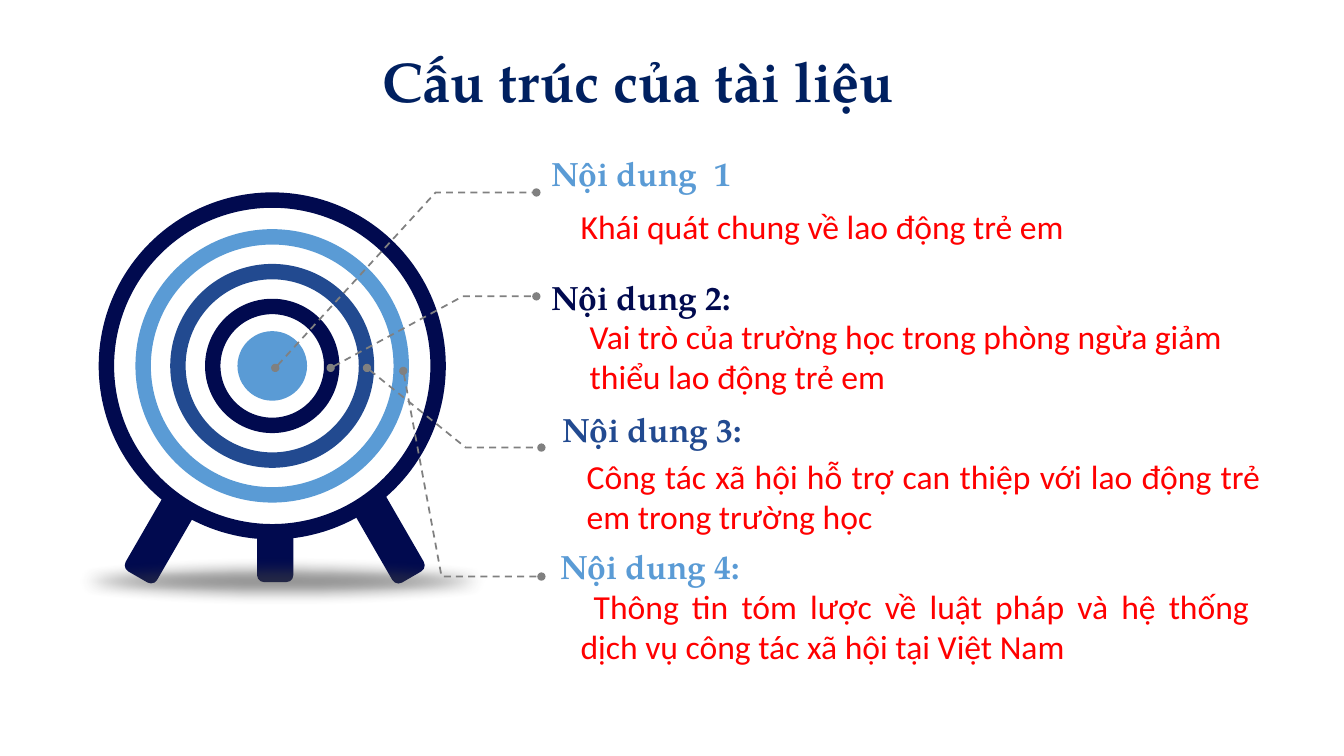
"""Build the slide with a target and its four called-out content parts."""
import lxml.etree
import pptx
import pptx.dml.color
import pptx.enum.dml
import pptx.enum.shapes
import pptx.enum.text
import pptx.oxml.ns
import pptx.util

TITLE = "Cấu trúc của tài liệu"
SECTIONS = [
    dict(heading="Nội dung  1", body="Khái quát chung về lao động trẻ em",
         color="sky", justify=True, heading_at=(5.37, 1.47, 7.29, 0.5),
         body_at=(5.66, 1.99, 7.29, 0.5), indent=0,
         leader=[(2.73, 3.65), (4.32, 1.91), (5.32, 1.91)]),
    dict(heading="Nội dung 2:",
         body="Vai trò của trường học trong phòng ngừa giảm thiểu lao động trẻ em",
         color="navy", justify=False, heading_at=(5.37, 2.7, 6.91, 0.5),
         body_at=(5.75, 3.08, 6.91, 0.91), indent=0,
         leader=[(3.28, 3.65), (4.59, 2.94), (5.32, 2.94)]),
    dict(heading="Nội dung 3:",
         body="Công tác xã hội hỗ trợ can thiệp với lao động trẻ em trong trường học",
         color="blue", justify=True, heading_at=(5.48, 4.01, 7.1, 0.5),
         body_at=(5.72, 4.47, 6.88, 0.91), indent=0,
         leader=[(3.64, 3.65), (4.62, 4.44), (5.37, 4.44)]),
    dict(heading="Nội dung 4:",
         body="Thông tin tóm lược về luật pháp và hệ thống dịch vụ công tác xã hội tại Việt Nam",
         color="sky", justify=True, heading_at=(5.46, 5.37, 6.96, 0.41),
         body_at=(5.66, 5.76, 6.83, 0.91), indent=0.13,
         leader=[(4, 3.68), (4.38, 5.72), (5.37, 5.72)]),
]
TARGET_CENTER = (2.7, 3.63)
RINGS = [(3.29, "navy"), (2.56, "sky"), (1.87, "blue"), (1.18, "navy")]
BULLSEYE = 0.69
LEGS = [(2.73, 4.65, 0), (3.52, 4.75, -30), (1.93, 4.75, 30)]
LEG_SIZE = (0.36, 2.25)
GROUND_SHADOW = (0.29, 5.52, 5.01, 0.49)

THEME = dict(
    navy="010A4F", blue="224A90", sky="5A9BD5", title="002060", body="FF0000",
    white="FFFFFF", leader="808080", ground="404040",
    serif="TeX Gyre Pagella", sans="Calibri",
    title_size=40, text_size=24, ring_width=11, leader_width=1.25,
)
ALIGN = pptx.enum.text.PP_ALIGN
PRESET = pptx.enum.shapes.MSO_SHAPE


def inches(values):
    return [pptx.util.Inches(value) for value in values]


def color(name):
    return pptx.dml.color.RGBColor.from_string(THEME[name])


def add_xml(parent, tag, **attributes):
    return lxml.etree.SubElement(parent, pptx.oxml.ns.qn(tag), attributes)


def add_text(slide, text, box, face, size, ink, align, bold=False):
    frame = slide.shapes.add_textbox(*inches(box)).text_frame
    frame.word_wrap = True
    paragraph = frame.paragraphs[0]
    paragraph.text = text
    paragraph.alignment = align
    paragraph.font.name = THEME[face]
    paragraph.font.size = pptx.util.Pt(THEME[size])
    paragraph.font.bold = bold
    paragraph.font.color.rgb = color(ink)
    return frame


def add_filled(slide, preset, center, size, fill, outline=None):
    left, top = (middle - length / 2 for middle, length in zip(center, size))
    shape = slide.shapes.add_shape(preset, *inches((left, top, *size)))
    shape.shadow.inherit = False
    shape.fill.solid()
    shape.fill.fore_color.rgb = color(fill)
    if outline:
        shape.line.color.rgb = color(outline)
        shape.line.width = pptx.util.Pt(THEME["ring_width"])
    else:
        shape.line.fill.background()
    return shape


def add_target(slide):
    for x, y, angle in LEGS:
        leg = add_filled(slide, PRESET.ROUNDED_RECTANGLE, (x, y), LEG_SIZE, "navy")
        leg.adjustments[0] = 0.194
        leg.rotation = angle
    for diameter, outline in RINGS:
        add_filled(slide, PRESET.OVAL, TARGET_CENTER, (diameter, diameter), "white", outline)
    add_filled(slide, PRESET.OVAL, TARGET_CENTER, (BULLSEYE, BULLSEYE), "sky")
    left, top, width, height = GROUND_SHADOW
    ground = add_filled(slide, PRESET.OVAL, (left + width / 2, top + height / 2),
                        (width, height), "ground")
    properties = ground._element.spPr
    add_xml(properties.find(".//" + pptx.oxml.ns.qn("a:srgbClr")), "a:alpha", val="58000")
    effects = properties.find(pptx.oxml.ns.qn("a:effectLst"))
    add_xml(effects, "a:softEdge", rad=str(pptx.util.Pt(10)))


def add_leader(slide, points):
    start, *bends = [inches(point) for point in points]
    builder = slide.shapes.build_freeform(*start, scale=1.0)
    builder.add_line_segments(bends, close=False)
    leader = builder.convert_to_shape()
    leader.shadow.inherit = False
    leader.fill.background()
    leader.line.color.rgb = color("leader")
    leader.line.width = pptx.util.Pt(THEME["leader_width"])
    leader.line.dash_style = pptx.enum.dml.MSO_LINE.DASH
    stroke = leader._element.spPr.find(pptx.oxml.ns.qn("a:ln"))
    for end in ("a:headEnd", "a:tailEnd"):
        add_xml(stroke, end, type="oval")


def add_section(slide, section):
    align = ALIGN.JUSTIFY if section["justify"] else ALIGN.LEFT
    heading = add_text(slide, section["heading"], section["heading_at"], "serif",
                       "text_size", section["color"], align, bold=True)
    body = add_text(slide, section["body"], section["body_at"], "sans",
                    "text_size", "body", align)
    for frame in (heading, body):
        frame.auto_size = pptx.enum.text.MSO_AUTO_SIZE.SHAPE_TO_FIT_TEXT
    if section["indent"]:
        first_line = body.paragraphs[0]._p.get_or_add_pPr()
        first_line.set("indent", str(pptx.util.Inches(section["indent"])))


def main():
    deck = pptx.Presentation()
    deck.slide_width, deck.slide_height = inches((13.33, 7.5))
    slide = deck.slides.add_slide(deck.slide_layouts[6])
    title = add_text(slide, TITLE, (0, 0.44, 12.66, 0.79), "serif",
                     "title_size", "title", ALIGN.CENTER, bold=True)
    title.vertical_anchor = pptx.enum.text.MSO_ANCHOR.MIDDLE
    title.paragraphs[0].line_spacing = 0.9
    title.paragraphs[0].space_before = pptx.util.Pt(10)
    add_target(slide)
    for section in SECTIONS:
        add_section(slide, section)
    for section in SECTIONS:
        add_leader(slide, section["leader"])
    deck.save("out.pptx")


if __name__ == "__main__":
    main()
